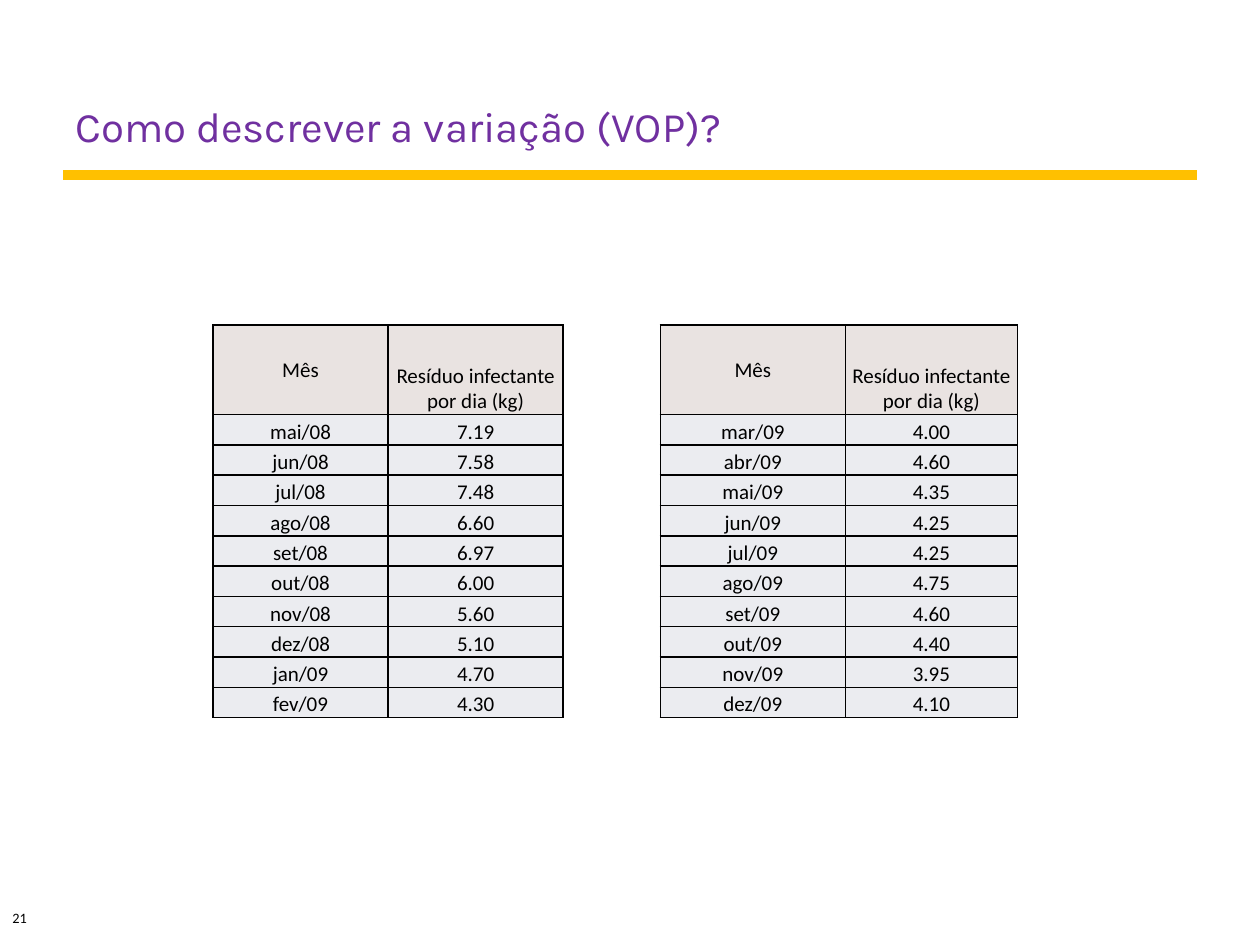
from lxml import etree
from pptx import Presentation
from pptx import util as u
from pptx.dml.color import RGBColor
from pptx.enum import shapes, text
from pptx.oxml.ns import qn

hues = {"ink": "000000", "title": "7030A0", "rule": "FFC000",
        "head": "E9E3E1", "body": "EBECF0"}
tint = {name: RGBColor.from_string(code) for name, code in hues.items()}

deck = Presentation()
deck.slide_width, deck.slide_height = u.Inches(10), u.Inches(7.5)
page = deck.slides.add_slide(deck.slide_layouts[6])
col, row = deck.slide_width / 100, deck.slide_height / 100


def place(x, y, w, h):
    return [int(n) for n in (x * col, y * row, w * col, h * row)]


def write(para, words, size, face, hue):
    run = para.add_run()
    run.text = words
    run.font.size = u.Pt(size)
    run.font.name = face
    run.font.color.rgb = tint[hue]


left, top, right, base = place(5, 18.53, 95, 18.53)
rule = page.shapes.add_connector(shapes.MSO_CONNECTOR.STRAIGHT, left, top, right, base)
rule.line.color.rgb = tint["rule"]
rule.line.width = u.Pt(6)
etree.SubElement(rule._element.spPr, qn("a:effectLst"))

labels = [
    ("21", (0, 95.6, 5.7, 3.2), 8.2, "Calibri", "ink", text.MSO_ANCHOR.TOP),
    ("Como descrever a variação (VOP)?", (5, 3.33, 90, 13.33), 24, "Karla", "title",
     text.MSO_ANCHOR.BOTTOM),
]
for words, spot, size, face, hue, anchor in labels:
    frame = page.shapes.add_textbox(*place(*spot)).text_frame
    frame.word_wrap = True
    frame.vertical_anchor = anchor
    write(frame.paragraphs[0], words, size, face, hue)

head = ("Mês", "Resíduo infectante por dia (kg)")
tall, low = 9.47, 3.21
grids = [
    (16.9, (13.9, 13.9), [
        ("mai/08", "7.19"), ("jun/08", "7.58"), ("jul/08", "7.48"), ("ago/08", "6.60"),
        ("set/08", "6.97"), ("out/08", "6.00"), ("nov/08", "5.60"), ("dez/08", "5.10"),
        ("jan/09", "4.70"), ("fev/09", "4.30")]),
    (52.4, (14.7, 13.65), [
        ("mar/09", "4.00"), ("abr/09", "4.60"), ("mai/09", "4.35"), ("jun/09", "4.25"),
        ("jul/09", "4.25"), ("ago/09", "4.75"), ("set/09", "4.60"), ("out/09", "4.40"),
        ("nov/09", "3.95"), ("dez/09", "4.10")]),
]
for x, wide, data in grids:
    spot = place(x, 34.4, sum(wide), tall + low * len(data))
    table = page.shapes.add_table(len(data) + 1, len(wide), *spot).table
    for c, share in enumerate(wide):
        table.columns[c].width = int(share * col)
    for r, line in enumerate([head] + data):
        table.rows[r].height = int((low if r else tall) * row)
        for c, words in enumerate(line):
            cell = table.cell(r, c)
            cell.margin_left = cell.margin_right = cell.margin_top = u.Inches(0.01)
            cell.margin_bottom = 0
            middle = r == 0 and c == 0
            cell.vertical_anchor = text.MSO_ANCHOR.MIDDLE if middle else text.MSO_ANCHOR.BOTTOM
            para = cell.text_frame.paragraphs[0]
            para.alignment = text.PP_ALIGN.CENTER
            write(para, words, 12, "Calibri", "ink")
            props = cell._tc.get_or_add_tcPr()
            for side in ("lnL", "lnR", "lnT", "lnB"):
                edge = etree.SubElement(props, qn("a:" + side), w=str(u.Pt(1)))
                fill = etree.SubElement(edge, qn("a:solidFill"))
                etree.SubElement(fill, qn("a:srgbClr"), val=hues["ink"])
            cell.fill.solid()
            cell.fill.fore_color.rgb = tint["body" if r else "head"]

deck.save("out.pptx")
